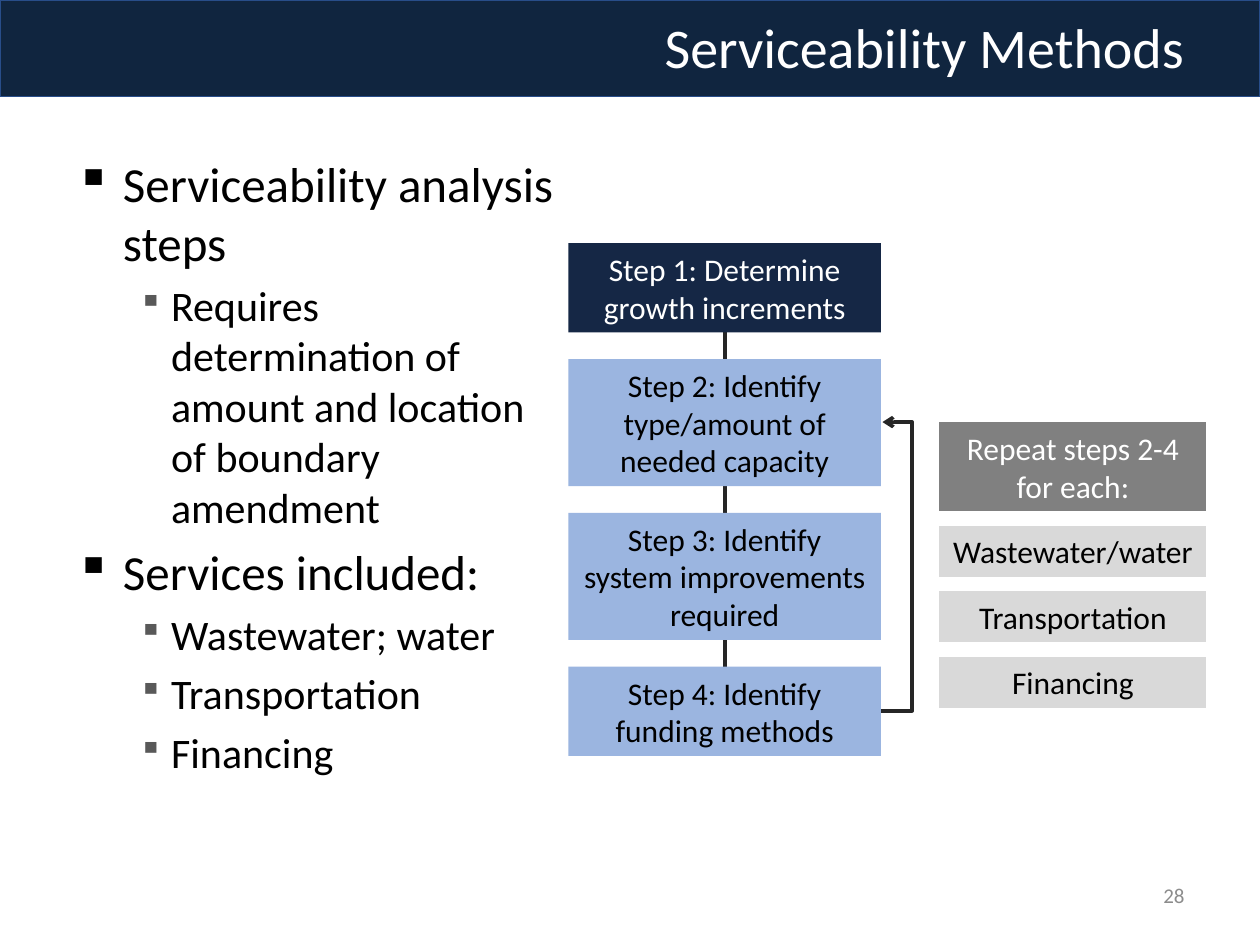
from lxml.etree import SubElement as Sub
from pptx import Presentation
from pptx.dml.color import RGBColor
from pptx.enum.shapes import MSO_CONNECTOR as Link, MSO_SHAPE as Form
from pptx.enum.text import MSO_ANCHOR as Anchor, MSO_AUTO_SIZE as Fit, PP_ALIGN as Align
from pptx.oxml.ns import qn
from pptx.util import Cm, Pt

BAND = RGBColor(0x10, 0x25, 0x3F)
EDGE = RGBColor(0x28, 0x4D, 0x89)
NAVY = RGBColor(0x15, 0x27, 0x45)
BLUE = RGBColor(0x9B, 0xB5, 0xE0)
GREY = RGBColor(0x80, 0x80, 0x80)
PALE = RGBColor(0xD9, 0xD9, 0xD9)
INK = RGBColor(0x26, 0x26, 0x26)
PAGE = RGBColor(0x8C, 0x8C, 0x8C)
MARK = RGBColor(0x59, 0x59, 0x59)
BLACK = RGBColor(0, 0, 0)
WHITE = RGBColor(0xFF, 0xFF, 0xFF)


class Board:
    font = "Calibri"

    def __init__(self, slide):
        self.slide = slide
        self.shapes = slide.shapes

    def style(self, para, size, color, align):
        para.alignment = align
        for run in para.runs:
            run.font.name = self.font
            run.font.size = Pt(size)
            run.font.color.rgb = color

    def frame(self, x, y, w, h):
        frame = self.shapes.add_textbox(Cm(x), Cm(y), Cm(w), Cm(h)).text_frame
        frame.word_wrap = True
        return frame

    def label(self, text, x, y, w, h, size, color, anchor=Anchor.TOP):
        frame = self.frame(x, y, w, h)
        frame.text = text
        frame.vertical_anchor = anchor
        self.style(frame.paragraphs[0], size, color, Align.RIGHT)

    def box(self, x, y, w, h, fill, form=Form.RECTANGLE, edge=None):
        box = self.shapes.add_shape(form, Cm(x), Cm(y), Cm(w), Cm(h))
        box.shadow.inherit = False
        box.fill.solid()
        box.fill.fore_color.rgb = fill
        if edge is None:
            box.line.fill.background()
        else:
            box.line.color.rgb = edge
            box.line.width = Pt(0.75)
        return box

    def stack(self, items, x, y, w, gap, form=Form.RECTANGLE):
        """Place captioned boxes below each other with an equal gap."""
        boxes = []
        for text, h, fill, color in items:
            box = self.box(x, y, w, h, fill, form)
            frame = box.text_frame
            frame.word_wrap = True
            frame.auto_size = Fit.SHAPE_TO_FIT_TEXT
            frame.text = text
            self.style(frame.paragraphs[0], 18, color, Align.CENTER)
            boxes.append(box)
            y += h + gap
        return boxes

    def bullets(self, items, x, y, w, h):
        frame = self.frame(x, y, w, h)
        for i, (level, text) in enumerate(items):
            para = frame.add_paragraph() if i else frame.paragraphs[0]
            para.text = text
            para.level = level
            size = 24 if level else 28
            para.space_before = Pt(size * 0.2)
            self.style(para, size, BLACK, Align.LEFT)
            props = para._p.get_or_add_pPr()
            left, hang = (1.93, 0.66) if level else (0.96, 0.96)
            props.set("marL", str(Cm(left)))
            props.set("indent", str(-Cm(hang)))
            if level:
                tint = Sub(props, qn("a:buClr"))
                Sub(tint, qn("a:srgbClr"), val=str(MARK))
                Sub(props, qn("a:buSzPct"), val="80000")
            Sub(props, qn("a:buChar"), char="▪")

    def line(self, x1, y1, x2, y2, kind=Link.STRAIGHT):
        line = self.shapes.add_connector(kind, Cm(x1), Cm(y1), Cm(x2), Cm(y2))
        line.line.color.rgb = INK
        line.line.width = Pt(2)
        Sub(line._element.spPr, qn("a:effectLst"))
        return line

    def loop(self, x, y1, y2, out):
        """Bent arrow that leaves and returns on the right of a column."""
        step = 0.03
        line = self.line(x, y1, x + step, y2, Link.ELBOW)
        Sub(line.line._get_or_add_ln(), qn("a:tailEnd"), type="arrow")
        guides = line._element.spPr.find(qn("a:prstGeom")).get_or_add_avLst()
        Sub(guides, qn("a:gd"), name="adj1",
            fmla=f"val {round(out / step * 100000)}")


def main():
    deck = Presentation()
    deck.slide_width, deck.slide_height = Cm(25.4), Cm(19.05)
    board = Board(deck.slides.add_slide(deck.slide_layouts[6]))

    # Title band and page number
    board.box(0, 0, 25.4, 1.95, BAND, edge=EDGE)
    board.label("Serviceability Methods", 1.27, 0.13, 22.86, 1.8, 32, WHITE)
    board.label("28", 21.59, 17.68, 2.54, 0.74, 12, PAGE, Anchor.MIDDLE)

    # Bullet list
    board.bullets([
        (0, "Serviceability analysis steps"),
        (1, "Requires determination of amount and location of boundary amendment"),
        (0, "Services included:"),
        (1, "Wastewater; water"),
        (1, "Transportation"),
        (1, "Financing"),
    ], 1.27, 2.97, 10.19, 14.6)

    # Steps, with the line behind them
    spine = board.line(14.61, 6.7, 14.61, 13.44)
    steps = board.stack([
        ("Step 1: Determine growth increments", 1.8, NAVY, WHITE),
        ("Step 2: Identify type/amount of needed capacity", 2.56, BLUE, BLACK),
        ("Step 3: Identify system improvements required", 2.56, BLUE, BLACK),
        ("Step 4: Identify funding methods", 1.8, BLUE, BLACK),
    ], 11.46, 4.9, 6.3, 0.54)
    spine.begin_connect(steps[0], 2)
    spine.end_connect(steps[-1], 0)

    # Return arrow from step 4 to step 2
    board.loop(17.76, 14.33, 8.51, 0.63)

    # Services the steps are repeated for
    services = ["Wastewater/water", "Transportation", "Financing"]
    board.stack(
        [("Repeat steps 2-4 for each:", 1.8, GREY, WHITE)]
        + [(name, 1.03, PALE, BLACK) for name in services],
        18.94, 8.51, 5.38, 0.29, Form.FLOWCHART_PROCESS)

    deck.save("out.pptx")


if __name__ == "__main__":
    main()
